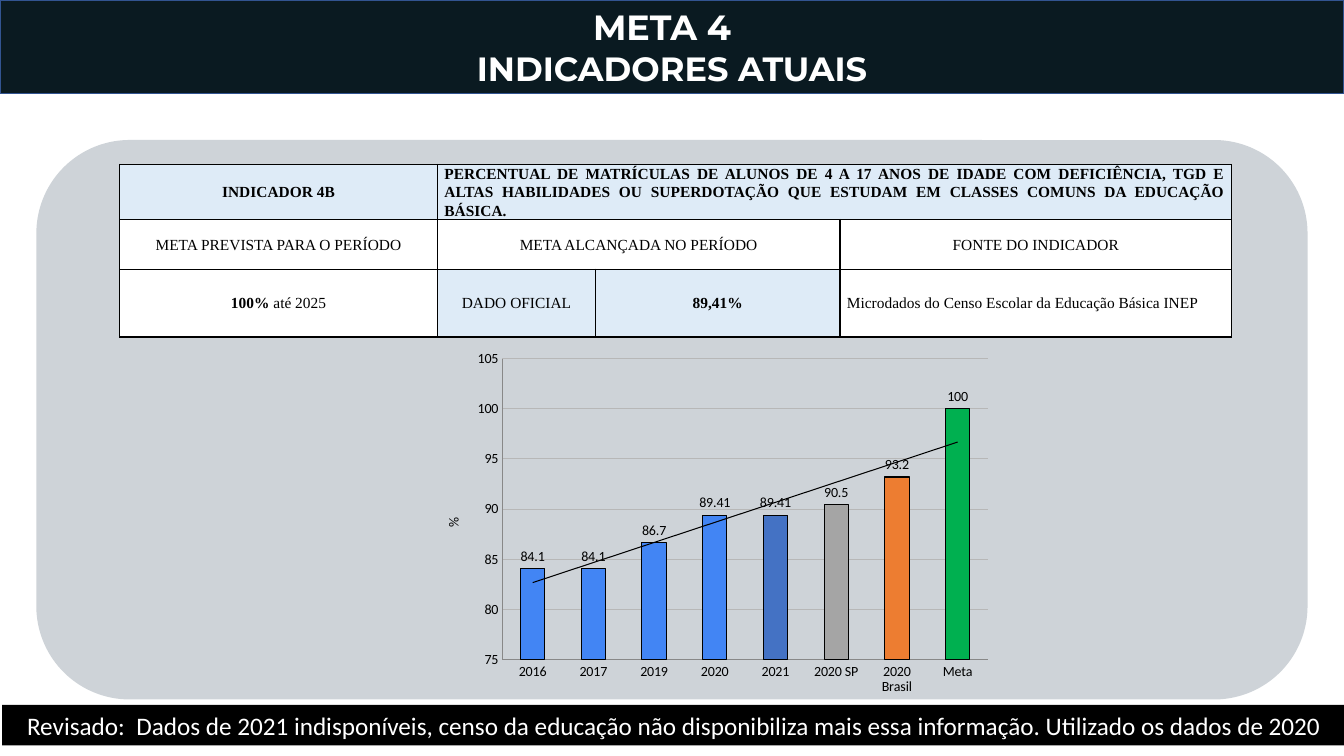
from lxml import etree
from pptx import Presentation
from pptx import util as u
from pptx.chart import data
from pptx.dml import color
from pptx.enum import chart as ch, shapes, text
from pptx.oxml import ns, parse_xml

BLACK, WHITE, PALE = "000000", "FFFFFF", "DEEBF7"
MID, JUST = text.PP_ALIGN.CENTER, text.PP_ALIGN.JUSTIFY


def rgb(code):
    return color.RGBColor.from_string(code)


class Deck:
    body, serif, head = "Calibri", "Times New Roman", "Montserrat"

    def __init__(self):
        self.prs = Presentation()
        self.prs.slide_width, self.prs.slide_height = u.Pt(960), u.Pt(540)
        self.slide = self.prs.slides.add_slide(self.prs.slide_layouts[5])

    def paint(self, item, fill, line=None, width=1):
        item.fill.solid()
        item.fill.fore_color.rgb = rgb(fill)
        if line:
            item.line.color.rgb = rgb(line)
            item.line.width = u.Pt(width)
        else:
            item.line.fill.background()

    def style(self, font, size, name, code=BLACK, bold=False):
        font.size, font.name, font.bold = u.Pt(size), name, bold
        font.color.rgb = rgb(code)

    def title(self, words, box, sizes, fill, line):
        bar = self.slide.shapes.title
        bar.left, bar.top, bar.width, bar.height = map(u.Pt, box)
        self.paint(bar, fill, line)
        frame = bar.text_frame
        frame.text = words
        frame.vertical_anchor = text.MSO_ANCHOR.MIDDLE
        frame.auto_size = text.MSO_AUTO_SIZE.NONE
        for par, size in zip(frame.paragraphs, sizes):
            par.alignment, par.line_spacing = MID, 1.0
            par.space_before = u.Pt(0)
            self.style(par.runs[0].font, size, self.head, WHITE, True)

    def shape(self, kind, box, fill, words=None, size=18):
        item = self.slide.shapes.add_shape(kind, *map(u.Pt, box))
        item.shadow.inherit = False
        self.paint(item, fill)
        if words:
            frame = item.text_frame
            frame.text, frame.word_wrap = words, True
            frame.vertical_anchor = text.MSO_ANCHOR.MIDDLE
            par = frame.paragraphs[0]
            par.alignment = MID
            self.style(par.runs[0].font, size, self.body, WHITE)

    def border(self, cell):
        props = cell._tc.get_or_add_tcPr()
        for spot, side in enumerate(("lnL", "lnR", "lnT", "lnB")):
            props.insert(spot, parse_xml(
                f'<a:{side} {ns.nsdecls("a")} w="12700"><a:solidFill>'
                f'<a:srgbClr val="{BLACK}"/></a:solidFill></a:{side}>'))

    def cell(self, cell, parts, fill, align):
        cell.margin_left = cell.margin_right = u.Pt(5)
        cell.margin_top = cell.margin_bottom = 0
        cell.vertical_anchor = text.MSO_ANCHOR.MIDDLE
        par = cell.text_frame.paragraphs[0]
        par.alignment, par.line_spacing = align, 1.07
        par.space_after = u.Pt(8)
        for words, bold in parts:
            run = par.add_run()
            run.text = words
            self.style(run.font, 11, self.serif, BLACK, bold)
        cell.fill.solid()
        cell.fill.fore_color.rgb = rgb(fill)

    def table(self, spot, cols, rows, merges, cells):
        box = (*spot, sum(cols), sum(rows))
        grid = self.slide.shapes.add_table(
            len(rows), len(cols), *map(u.Pt, box)).table
        for col, width in zip(grid.columns, cols):
            col.width = u.Pt(width)
        for row, height in zip(grid.rows, rows):
            row.height = u.Pt(height)
        for row, first, last in merges:
            grid.cell(row, first).merge(grid.cell(row, last))
        for row, col, parts, fill, align in cells:
            self.cell(grid.cell(row, col), parts, fill, align)
        for cell in grid.iter_cells():
            self.border(cell)

    def chart(self, box, cats, vals, fill, points, plot):
        info = data.CategoryChartData()
        info.categories = cats
        info.add_series("Series 1", vals)
        chart = self.slide.shapes.add_chart(
            ch.XL_CHART_TYPE.COLUMN_CLUSTERED, *map(u.Pt, box), info).chart
        chart.has_legend = chart.has_title = False
        self.style(chart.font, 10, self.body)
        # Axes
        for axis in (chart.category_axis, chart.value_axis):
            axis.major_tick_mark = axis.minor_tick_mark = ch.XL_TICK_MARK.NONE
            axis.format.line.color.rgb = rgb("888888")
            self.style(axis.tick_labels.font, 10, self.body)
        axis = chart.value_axis
        axis.minimum_scale, axis.maximum_scale, axis.major_unit = 75, 105, 5
        axis.major_gridlines.format.line.color.rgb = rgb("B7B7B7")
        axis.major_gridlines.format.line.width = u.Pt(0.75)
        frame = axis.axis_title.text_frame
        frame.text = "%"
        self.style(frame.paragraphs[0].runs[0].font, 10, self.body)
        # Columns and labels
        bars = chart.plots[0]
        bars.gap_width, bars.vary_by_categories = 150, False
        series = bars.series[0]
        self.paint(series.format, fill, BLACK, 0.75)
        for spot, code in points.items():
            self.paint(series.points[spot].format, code, BLACK, 0.75)
        tags = series.data_labels
        tags.show_value = True
        tags.position = ch.XL_LABEL_POSITION.OUTSIDE_END
        self.style(tags.font, 10, self.body)
        # Trend line
        series._element.find(ns.qn("c:cat")).addprevious(parse_xml(
            f'<c:trendline {ns.nsdecls("c", "a")}><c:spPr><a:ln w="9525">'
            f'<a:solidFill><a:srgbClr val="{BLACK}"/></a:solidFill></a:ln>'
            '</c:spPr><c:trendlineType val="linear"/><c:dispRSqr val="0"/>'
            '<c:dispEq val="0"/></c:trendline>'))
        # Plot area
        area = chart._chartSpace.find(".//" + ns.qn("c:plotArea"))
        old = area.find(ns.qn("c:layout"))
        if old is not None:
            area.remove(old)
        layout = parse_xml(f'<c:layout {ns.nsdecls("c")}><c:manualLayout/></c:layout>')
        marks = [("layoutTarget", "inner"), ("xMode", "edge"), ("yMode", "edge")]
        for tag, val in marks + list(zip("xywh", plot)):
            etree.SubElement(layout[0], ns.qn("c:" + tag)).set("val", str(val))
        area.insert(0, layout)


def main():
    deck = Deck()
    # Header and panel
    deck.title("META 4  \nINDICADORES ATUAIS", (0, 0, 960, 67), (25, 24),
               "0A1A21", "325491")
    kind = shapes.MSO_SHAPE
    deck.shape(kind.ROUNDED_RECTANGLE, (26, 100, 908, 399.6), "CED3D8")
    # Indicator table: row, column, runs, fill, alignment
    deck.table((85.5, 117.5), (227, 113, 174.5, 280), (39, 35.5, 48.5),
               [(0, 1, 3), (1, 1, 2)], [
        (0, 0, [("INDICADOR 4B", True)], PALE, MID),
        (0, 1, [("PERCENTUAL DE MATRÍCULAS DE ALUNOS DE 4 A 17 ANOS DE IDADE "
                 "COM DEFICIÊNCIA, TGD E ALTAS HABILIDADES OU SUPERDOTAÇÃO QUE "
                 "ESTUDAM EM CLASSES COMUNS DA EDUCAÇÃO BÁSICA.", True)],
         PALE, JUST),
        (1, 0, [("META PREVISTA PARA O PERÍODO", False)], WHITE, MID),
        (1, 1, [("META ALCANÇADA NO PERÍODO", False)], WHITE, MID),
        (1, 3, [("FONTE DO INDICADOR", False)], WHITE, MID),
        (2, 0, [("100%", True), (" até 2025", False)], WHITE, MID),
        (2, 1, [("DADO OFICIAL", False)], PALE, MID),
        (2, 2, [("89,41%", True)], PALE, MID),
        (2, 3, [("Microdados do Censo Escolar da Educação Básica INEP", False)],
         WHITE, JUST)])
    # Yearly chart
    deck.chart((301, 246, 413, 256),
               ["2016", "2017", "2019", "2020", "2021", "2020 SP",
                "2020 Brasil", "Meta"],
               [84.1, 84.1, 86.7, 89.41, 89.41, 90.5, 93.2, 100], "4285F4",
               {4: "4472C4", 5: "A5A5A5", 6: "ED7D31", 7: "00B050"},
               (0.14, 0.04, 0.84, 0.84))
    # Footer
    deck.shape(kind.RECTANGLE, (1.5, 503.5, 960, 29), BLACK,
               "Revisado:  Dados de 2021 indisponíveis, censo da educação não "
               "disponibiliza mais essa informação. Utilizado os dados de 2020")
    deck.prs.save("out.pptx")


if __name__ == "__main__":
    main()
